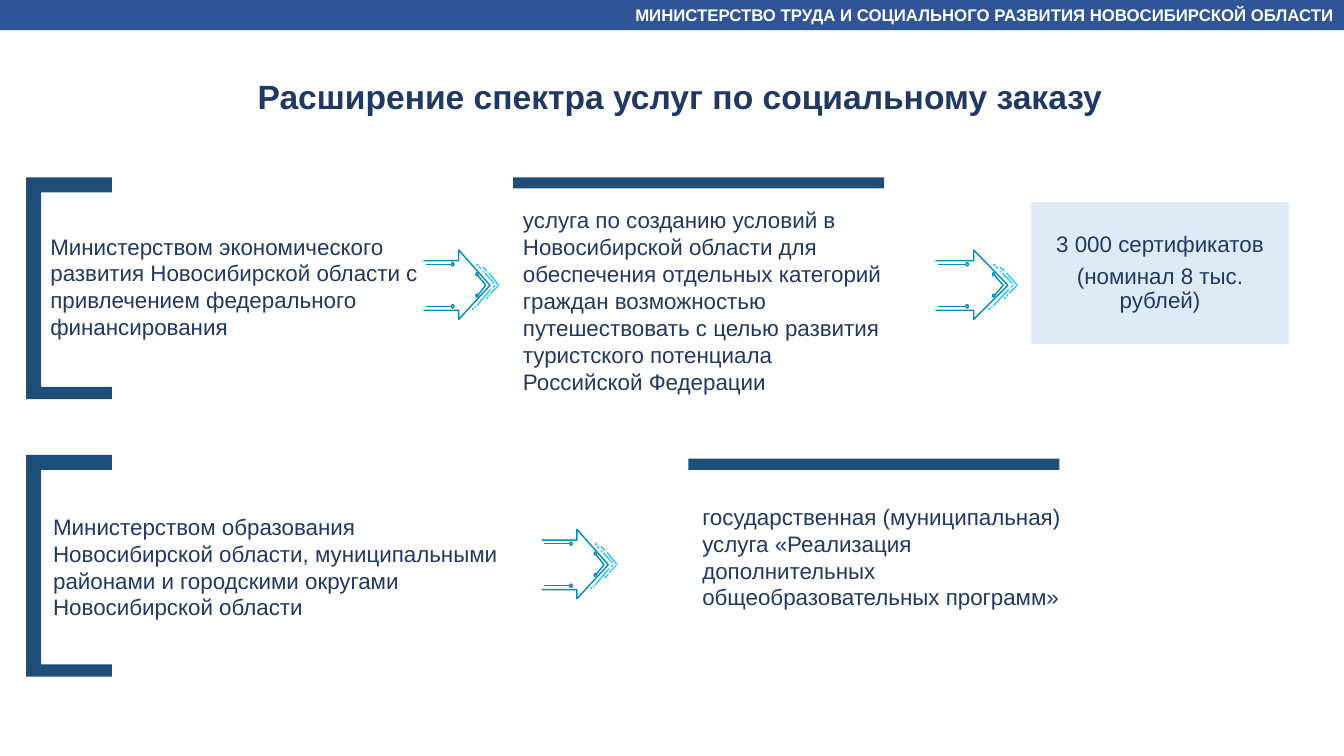
from dataclasses import dataclass

from lxml.etree import SubElement
from pptx import Presentation
from pptx.dml.color import RGBColor
from pptx.enum.shapes import MSO_CONNECTOR, MSO_SHAPE
from pptx.enum.text import MSO_ANCHOR, MSO_AUTO_SIZE, PP_ALIGN
from pptx.oxml.ns import qn
from pptx.shapes.autoshape import Shape
from pptx.shapes.shapetree import GroupShapes, SlideShapes
from pptx.text.text import TextFrame
from pptx.util import Cm, Pt

NAVY = "203864"
STEEL = "1F4E79"
TEAL = "008BBC"
CYAN = "29C7FF"

Point = tuple[float, float]


@dataclass(frozen=True)
class Box:
    left: float
    top: float
    width: float
    height: float

    def lengths(self) -> tuple[Cm, Cm, Cm, Cm]:
        return Cm(self.left), Cm(self.top), Cm(self.width), Cm(self.height)


@dataclass(frozen=True)
class Statement:
    text: str
    box: Box


@dataclass(frozen=True)
class CircuitArrow:
    left: float
    top: float
    stretch: float = 1.0

    def place(self, x: float, y: float) -> Point:
        return self.left + x * self.stretch, self.top + y


STATEMENTS = [
    Statement("Министерством экономического развития Новосибирской области с "
              "привлечением федерального финансирования", Box(1.02, 5.74, 9.78, 3)),
    Statement("услуга по созданию условий в Новосибирской области для обеспечения "
              "отдельных категорий граждан возможностью путешествовать с целью развития "
              "туристского потенциала Российской Федерации", Box(12.93, 5.08, 9.78, 6.4)),
    Statement("Министерством образования Новосибирской области, муниципальными районами "
              "и городскими округами Новосибирской области", Box(1.09, 12.8, 12.04, 3)),
    Statement("государственная (муниципальная) услуга «Реализация дополнительных "
              "общеобразовательных программ»", Box(17.45, 12.55, 9.78, 3)),
]
SERVICE_BARS = [Box(12.93, 4.47, 9.35, 0.28), Box(17.35, 11.56, 9.35, 0.28)]
BRACKET_TOPS = [4.47, 11.46]
BRACKET = [(0, 0), (2.16, 0), (2.16, 0.38), (0.38, 0.38),
           (0.38, 5.28), (2.16, 5.28), (2.16, 5.59), (0, 5.59)]

ARROWS = [CircuitArrow(10.67, 6.3), CircuitArrow(23.57, 6.3, 1.09),
          CircuitArrow(13.65, 13.34)]
STREAKS = [
    ((1.8, 0.89), (1.75, 0.94)), ((1.88, 0.91), (1.7, 1.09)),
    ((1.68, 1.12), (1.65, 1.17)), ((1.7, 0.99), (1.35, 1.4)),
    ((1.78, 0.84), (1.55, 0.58)), ((1.9, 0.89), (1.65, 0.58)),
    ((1.6, 0.53), (1.5, 0.43)), ((1.52, 0.56), (1.5, 0.53)),
    ((1.45, 0.48), (1.4, 0.41)), ((1.32, 1.42), (1.3, 1.45)),
]
SPARKS = [(1.6, 1.19), (1.24, 1.47), (1.35, 0.36)]
ARROW_OUTLINE = [(0, 1.52), (0.89, 1.52), (0.89, 1.75), (1.68, 0.89),
                 (0.89, 0), (0.89, 0.27), (0, 0.27)]
CHEVRON = [(1.35, 0.61), (1.57, 0.89), (1.35, 1.17)]
LEADS = [((0.06, 0.36), (0.71, 0.36)), ((0.06, 1.42), (0.71, 1.42))]
LEAD_NODES = [(0.71, 0.32), (0.71, 1.38)]
CHEVRON_NODES = [(1.32, 0.57), (1.32, 1.11)]


def rgb(value: str) -> RGBColor:
    return RGBColor.from_string(value)


def paint(shape: Shape, fill: str | None, line: str | None = None, weight: float = 1) -> None:
    shape.shadow.inherit = False
    if fill:
        shape.fill.solid()
        shape.fill.fore_color.rgb = rgb(fill)
    else:
        shape.fill.background()
    if line:
        shape.line.color.rgb = rgb(line)
        shape.line.width = Pt(weight)
    else:
        shape.line.fill.background()


def format_text(frame: TextFrame, size: float, color: str, align: PP_ALIGN,
                bold: bool = False) -> None:
    frame.word_wrap = True
    for paragraph in frame.paragraphs:
        paragraph.alignment = align
        for run in paragraph.runs:
            run.font.name = "Arial"
            run.font.size = Pt(size)
            run.font.bold = bold
            run.font.color.rgb = rgb(color)


def add_block(shapes: GroupShapes | SlideShapes, kind: MSO_SHAPE, box: Box,
              fill: str | None, line: str | None = None, weight: float = 1) -> Shape:
    block = shapes.add_shape(kind, *box.lengths())
    paint(block, fill, line, weight)
    return block


def add_outline(shapes: GroupShapes | SlideShapes, points: list[Point], close: bool,
                fill: str | None, line: str | None = None) -> None:
    corners = [(Cm(x), Cm(y)) for x, y in points]
    builder = shapes.build_freeform(*corners[0])
    builder.add_line_segments(corners[1:], close=close)
    paint(builder.convert_to_shape(), fill, line)


def add_stroke(shapes: GroupShapes, start: Point, end: Point, color: str) -> None:
    ends = [Cm(value) for value in (*start, *end)]
    stroke = shapes.add_connector(MSO_CONNECTOR.STRAIGHT, *ends)
    stroke.line.color.rgb = rgb(color)
    stroke.line.width = Pt(1)
    SubElement(stroke._element.spPr, qn("a:effectLst"))


def add_circuit_arrow(slide_shapes: SlideShapes, arrow: CircuitArrow) -> None:
    parts = slide_shapes.add_group_shape().shapes
    for start, end in STREAKS:
        add_stroke(parts, arrow.place(*start), arrow.place(*end), CYAN)
    for spark in SPARKS:
        add_block(parts, MSO_SHAPE.OVAL, Box(*arrow.place(*spark), 0.03, 0.03),
                  "BFBFBF", CYAN, 0.75)
    for points in (ARROW_OUTLINE, CHEVRON):
        add_outline(parts, [arrow.place(*point) for point in points], False, None, TEAL)
    for start, end in LEADS:
        add_stroke(parts, arrow.place(*start), arrow.place(*end), TEAL)
    for nodes, fill, weight in ((LEAD_NODES, None, 1), (CHEVRON_NODES, "5B9BD5", 0.75)):
        for node in nodes:
            add_block(parts, MSO_SHAPE.OVAL, Box(*arrow.place(*node), 0.06, 0.08),
                      fill, TEAL, weight)


def add_statement(shapes: SlideShapes, statement: Statement) -> None:
    frame = shapes.add_textbox(*statement.box.lengths()).text_frame
    frame.text = statement.text
    format_text(frame, 16, NAVY, PP_ALIGN.LEFT)
    frame.auto_size = MSO_AUTO_SIZE.SHAPE_TO_FIT_TEXT


def add_certificates(shapes: SlideShapes) -> None:
    certificates = add_block(shapes, MSO_SHAPE.RECTANGLE, Box(25.96, 5.08, 6.55, 3.61),
                             "DEEBF7", "FFFFFF")
    frame = certificates.text_frame
    frame.text = "3 000 сертификатов\n(номинал 8 тыс. рублей)"
    format_text(frame, 16, NAVY, PP_ALIGN.CENTER)
    frame.vertical_anchor = MSO_ANCHOR.MIDDLE
    frame.margin_left = frame.margin_right = Cm(0.3)
    frame.margin_top = frame.margin_bottom = Cm(0.3)
    for paragraph in frame.paragraphs:
        paragraph.line_spacing = 0.9
        paragraph.space_after = Pt(5.6)


def main() -> None:
    deck = Presentation()
    deck.slide_width, deck.slide_height = Cm(33.87), Cm(19.05)
    slide = deck.slides.add_slide(deck.slide_layouts[5])
    shapes = slide.shapes

    title = shapes.title
    title.left, title.top, title.width, title.height = Box(0.2, 1.78, 33.87, 1.27).lengths()
    title.text_frame.text = "Расширение спектра услуг по социальному заказу"
    format_text(title.text_frame, 24, NAVY, PP_ALIGN.CENTER, bold=True)
    title.text_frame.vertical_anchor = MSO_ANCHOR.TOP

    ministry = add_block(shapes, MSO_SHAPE.RECTANGLE, Box(0, 0, 33.87, 0.76), "2F5597")
    ministry.text_frame.text = "МИНИСТЕРСТВО ТРУДА И СОЦИАЛЬНОГО РАЗВИТИЯ НОВОСИБИРСКОЙ ОБЛАСТИ"
    format_text(ministry.text_frame, 12, "FFFFFF", PP_ALIGN.RIGHT, bold=True)

    for top in BRACKET_TOPS:
        add_outline(shapes, [(0.66 + x, top + y) for x, y in BRACKET], True, STEEL)
    for bar in SERVICE_BARS:
        add_block(shapes, MSO_SHAPE.RECTANGLE, bar, STEEL)
    for statement in STATEMENTS:
        add_statement(shapes, statement)
    for arrow in ARROWS:
        add_circuit_arrow(shapes, arrow)
    add_certificates(shapes)

    deck.save("out.pptx")


if __name__ == "__main__":
    main()
